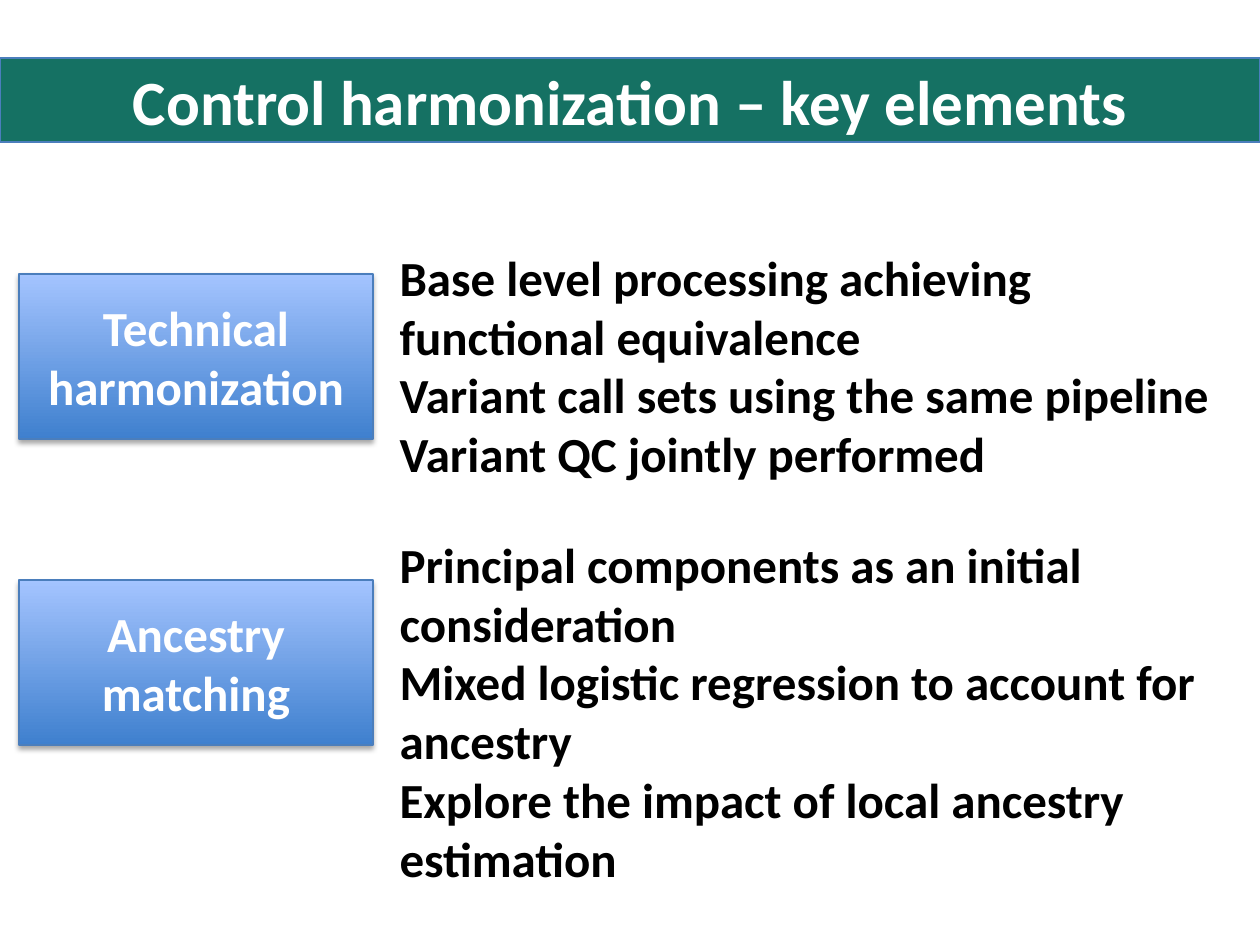
from lxml import etree
from pptx import Presentation
from pptx import util as u
from pptx.dml.color import RGBColor
from pptx.enum import shapes, text
from pptx.oxml import ns

PX_PER_INCH = 126
COLORS = {
    "banner": "157163",
    "outline": "4B7EBC",
    "box_bottom": "3F80CE",
    "box_top": "A4C4FF",
    "light": "FFFFFF",
    "dark": "000000",
    "shadow": "000000",
}


def px(length):
    return u.Emu(round(length * 914400 / PX_PER_INCH))


def color(name):
    return RGBColor.from_string(COLORS[name])


class SlideBuilder:
    font_name = "Calibri"
    title_size = 36
    text_size = 28

    def __init__(self, slide):
        self.slide = slide

    def place(self, shape, left, top, width, height):
        shape.left, shape.top = px(left), px(top)
        shape.width, shape.height = px(width), px(height)

    def outline(self, shape):
        shape.line.color.rgb = color("outline")
        shape.line.width = u.Pt(0.75)

    def set_text(self, shape, lines, size, color_name, alignment, anchor):
        frame = shape.text_frame
        frame.text = "\n".join(lines)
        frame.word_wrap = True
        frame.auto_size = text.MSO_AUTO_SIZE.NONE
        frame.vertical_anchor = anchor
        for paragraph in frame.paragraphs:
            paragraph.alignment = alignment
            paragraph.space_before = u.Pt(0)
            paragraph.font.name = self.font_name
            paragraph.font.size = u.Pt(size)
            paragraph.font.bold = True
            paragraph.font.color.rgb = color(color_name)

    def title(self, line, *bounds):
        shape = self.slide.shapes.title
        self.place(shape, *bounds)
        shape.fill.solid()
        shape.fill.fore_color.rgb = color("banner")
        self.outline(shape)
        self.set_text(shape, [line], self.title_size, "light",
                      text.PP_ALIGN.CENTER, text.MSO_ANCHOR.MIDDLE)

    def heading_box(self, lines, *bounds):
        shape = self.slide.shapes.add_shape(
            shapes.MSO_SHAPE.RECTANGLE, *map(px, bounds))
        shape.fill.gradient()
        shape.fill.gradient_angle = 90
        for stop, name in zip(shape.fill.gradient_stops, ("box_bottom", "box_top")):
            stop.color.rgb = color(name)
        self.outline(shape)
        self.soft_shadow(shape)
        self.set_text(shape, lines, self.text_size, "light",
                      text.PP_ALIGN.CENTER, text.MSO_ANCHOR.MIDDLE)

    def soft_shadow(self, shape):
        shape.shadow.inherit = False
        effects = shape.element.spPr.find(ns.qn("a:effectLst"))
        shadow = etree.SubElement(
            effects, ns.qn("a:outerShdw"), blurRad=str(u.Pt(3.1)),
            dist=str(u.Pt(1.8)), dir="5400000", rotWithShape="0")
        tint = etree.SubElement(shadow, ns.qn("a:srgbClr"), val=COLORS["shadow"])
        etree.SubElement(tint, ns.qn("a:alpha"), val="35000")

    def plain_list(self, placeholder_index, lines, *bounds):
        """Fill a body placeholder with unbulleted, unindented lines."""
        shape = self.slide.placeholders[placeholder_index]
        self.place(shape, *bounds)
        self.set_text(shape, lines, self.text_size, "dark",
                      text.PP_ALIGN.LEFT, text.MSO_ANCHOR.TOP)
        for paragraph in shape.text_frame.paragraphs:
            properties = paragraph._p.get_or_add_pPr()
            properties.set("marL", "0")
            properties.set("indent", "0")
            bullet = etree.Element(ns.qn("a:buNone"))
            properties.find(ns.qn("a:defRPr")).addprevious(bullet)


def main():
    presentation = Presentation()
    presentation.slide_width, presentation.slide_height = px(1260), px(945)
    two_content = presentation.slide_layouts.get_by_name("Two Content")
    builder = SlideBuilder(presentation.slides.add_slide(two_content))

    builder.title("Control harmonization – key elements", 0, 58, 1260, 84)

    sections = [
        (["Technical harmonization"], 274,
         ["Base level processing achieving functional equivalence",
          "Variant call sets using the same pipeline",
          "Variant QC jointly performed"], 241, 858, 251),
        (["Ancestry", "matching"], 580,
         ["Principal components as an initial consideration",
          "Mixed logistic regression to account for ancestry",
          "Explore the impact of local ancestry estimation"], 528, 834, 369),
    ]
    for index, section in enumerate(sections, start=1):
        heading, box_top, points, list_top, list_width, list_height = section
        builder.heading_box(heading, 19, box_top, 354, 165)
        builder.plain_list(index, points, 387, list_top, list_width, list_height)

    presentation.save("out.pptx")


if __name__ == "__main__":
    main()
